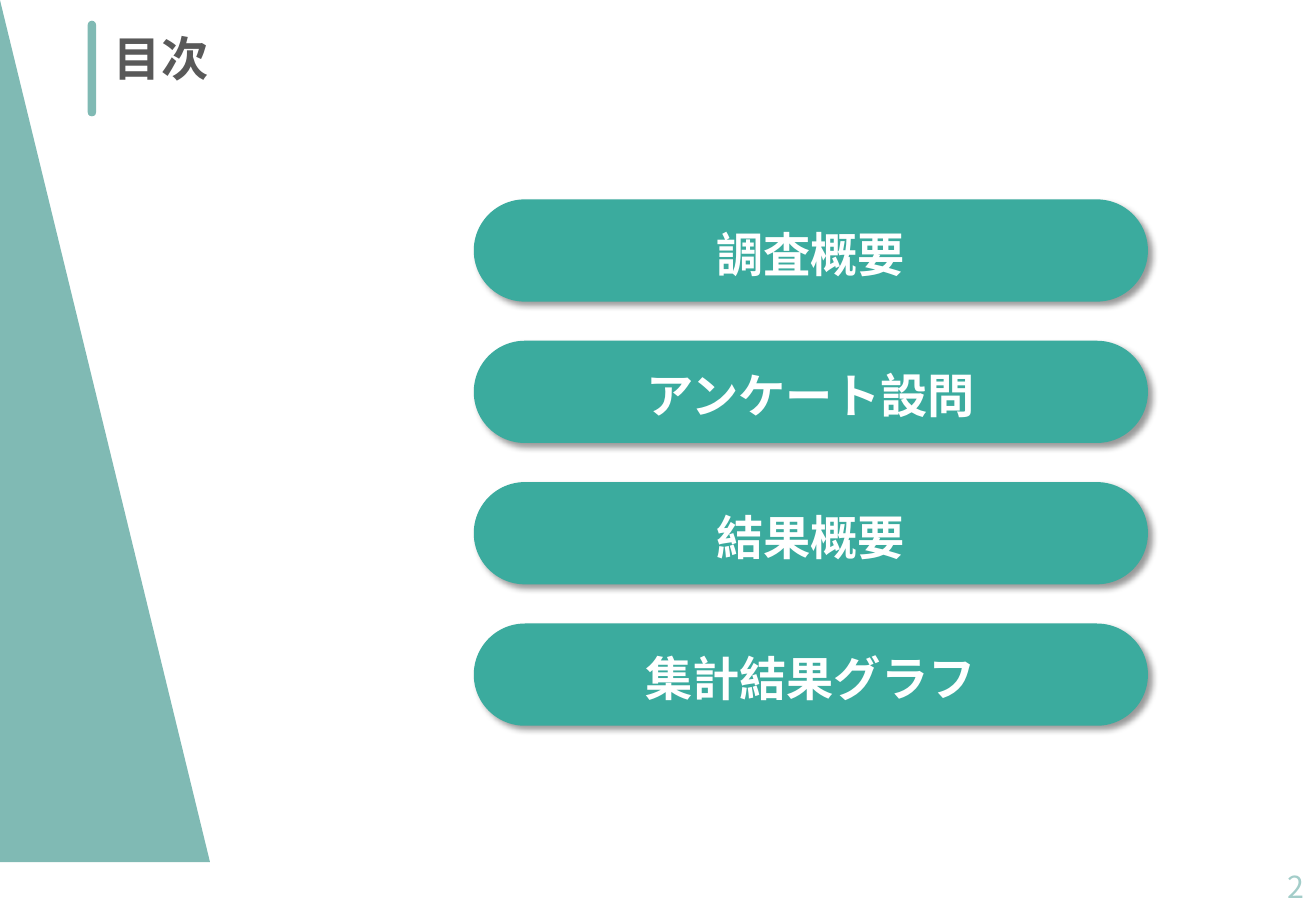
from pptx import Presentation
from pptx.dml.color import RGBColor
from pptx.enum.shapes import MSO_SHAPE
from pptx.enum.text import MSO_ANCHOR, PP_ALIGN
from pptx.oxml import parse_xml
from pptx.oxml.ns import nsdecls
from pptx.util import Pt

SAGE = RGBColor(0x80, 0xBA, 0xB4)
TEAL = RGBColor(0x3B, 0xAB, 0x9E)
PALE = RGBColor(0xA3, 0xCD, 0xC9)
GRAY = RGBColor(0x59, 0x59, 0x59)
WHITE = RGBColor(0xFF, 0xFF, 0xFF)
FONT = "Noto Sans CJK JP"
SHADOW = (
    f'<a:effectLst {nsdecls("a")}>'
    '<a:outerShdw blurRad="50800" dist="38100" dir="2700000" algn="tl" rotWithShape="0">'
    '<a:srgbClr val="000000"><a:alpha val="40000"/></a:srgbClr>'
    '</a:outerShdw></a:effectLst>'
)

deck = Presentation()
deck.slide_width = Pt(780)
deck.slide_height = Pt(540)
slide = deck.slides.add_slide(deck.slide_layouts[6])


def add_form(kind, left, top, width, height, color):
    form = slide.shapes.add_shape(kind, Pt(left), Pt(top), Pt(width), Pt(height))
    form.shadow.inherit = False
    form.fill.solid()
    form.fill.fore_color.rgb = color
    form.line.fill.background()
    if kind == MSO_SHAPE.ROUNDED_RECTANGLE:
        form.adjustments[0] = 0.5
    return form


def add_label(text, left, top, width, height, size, color, bold, align, inset):
    box = slide.shapes.add_textbox(Pt(left), Pt(top), Pt(width), Pt(height))
    frame = box.text_frame
    frame.word_wrap = True
    frame.margin_top = Pt(inset)
    frame.margin_bottom = Pt(0)
    frame.text = text
    line = frame.paragraphs[0]
    line.alignment = align
    font = line.runs[0].font
    font.name = FONT
    font.size = Pt(size)
    font.bold = bold
    font.color.rgb = color
    font.fill
    props = line.runs[0]._r.get_or_add_rPr()
    props.append(parse_xml(f'<a:ea {nsdecls("a")} typeface="{FONT}"/>'))
    return frame


add_form(MSO_SHAPE.RIGHT_TRIANGLE, 0, 0, 124.5, 511, SAGE)

page = add_label("2", 604.8, 511.2, 175.5, 28.8, 18, PALE, False, PP_ALIGN.RIGHT, 0)
page.vertical_anchor = MSO_ANCHOR.MIDDLE

title = add_label("目次", 60.5, 22.3, 666.7, 46.8, 28, GRAY, True, PP_ALIGN.LEFT, 0)
title.paragraphs[0].line_spacing = 0.85
add_form(MSO_SHAPE.ROUNDED_RECTANGLE, 52, 12.3, 5, 56.7, SAGE)

topics = ["調査概要", "アンケート設問", "結果概要", "集計結果グラフ"]
for row, topic in enumerate(topics):
    top = 118.2 + row * 83.8
    pill = add_form(MSO_SHAPE.ROUNDED_RECTANGLE, 280.8, top, 399.6, 60.6, TEAL)
    props = pill._element.spPr
    props.remove(props.find("{*}effectLst"))
    props.append(parse_xml(SHADOW))
    add_label(topic, 322.6, top + 7.9, 315.4, 44.6, 28, WHITE, True, PP_ALIGN.CENTER, 7.4)

deck.save("out.pptx")
